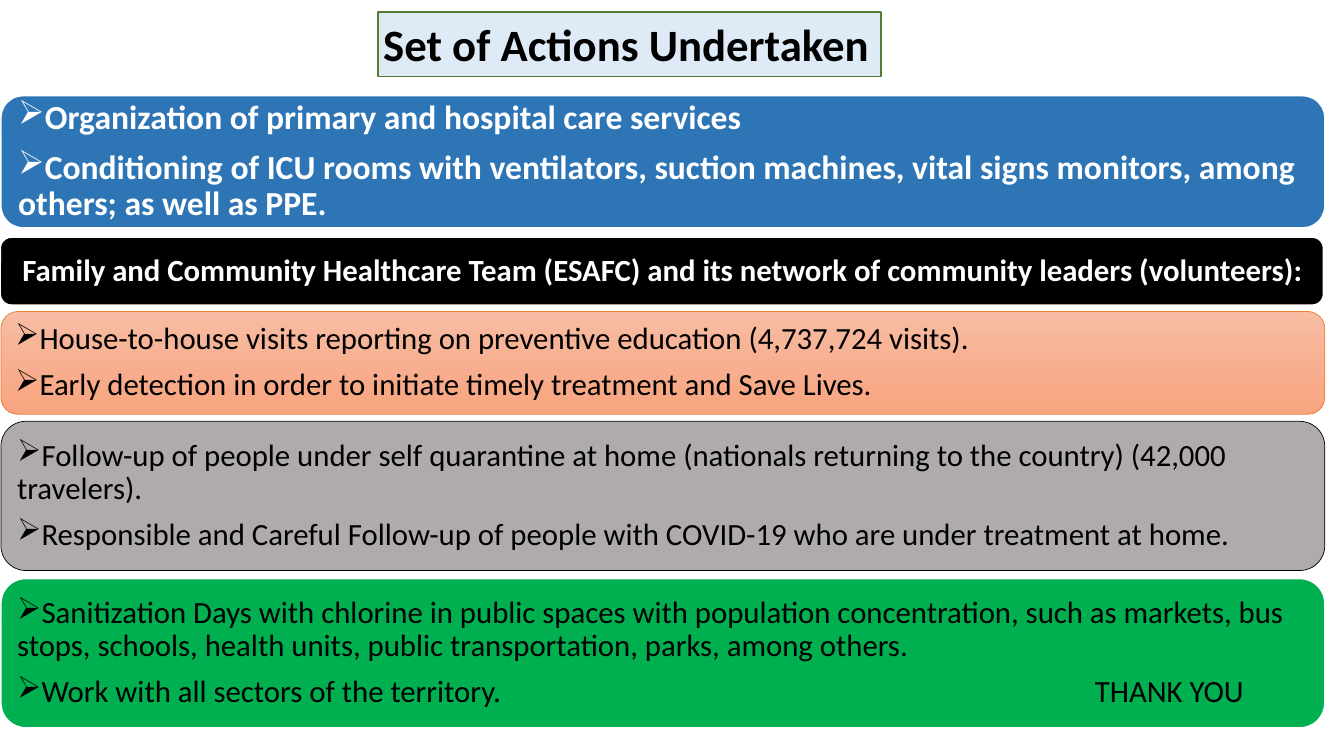
from lxml import etree
from pptx import Presentation
from pptx.dml.color import RGBColor
from pptx.enum.shapes import MSO_SHAPE
from pptx.enum.text import MSO_ANCHOR, PP_ALIGN
from pptx.oxml.ns import qn
from pptx.util import Inches, Pt

RECTANGLE = MSO_SHAPE.RECTANGLE
ROUNDED = MSO_SHAPE.ROUNDED_RECTANGLE
MIDDLE, TOP = MSO_ANCHOR.MIDDLE, MSO_ANCHOR.TOP
LEFT, CENTER, JUSTIFY = PP_ALIGN.LEFT, PP_ALIGN.CENTER, PP_ALIGN.JUSTIFY

WHITE = RGBColor(0xFF, 0xFF, 0xFF)
BLACK = RGBColor(0x00, 0x00, 0x00)
BLUE = RGBColor(0x2E, 0x75, 0xB6)
PALE_BLUE = RGBColor(0xDE, 0xEB, 0xF7)
DARK_GREEN = RGBColor(0x52, 0x7E, 0x34)
GREEN = RGBColor(0x00, 0xB0, 0x50)
GRAY = RGBColor(0xAF, 0xAB, 0xAB)
ORANGE = RGBColor(0xED, 0x7D, 0x31)
PEACH = RGBColor(0xF7, 0xBC, 0xA3)
SALMON = RGBColor(0xF8, 0xA4, 0x7F)


class ActionsSlide:
    font = "Calibri"
    inset = Inches(0.05)
    panel_width = 13.13
    closing_tab = Inches(10.69)

    def __init__(self, slide):
        self.slide = slide

    def box(self, kind, left, top, width, height, fill, line, weight):
        """Draw a filled shape; a pair of fills makes a vertical gradient."""
        shape = self.slide.shapes.add_shape(
            kind, Inches(left), Inches(top), Inches(width), Inches(height))
        shape.shadow.inherit = False
        if isinstance(fill, RGBColor):
            shape.fill.solid()
            shape.fill.fore_color.rgb = fill
        else:
            shape.fill.gradient()
            shape.fill.gradient_angle = 270
            for stop, color, position in zip(shape.fill.gradient_stops, fill, (0, 1)):
                stop.color.rgb = color
                stop.position = position
        shape.line.color.rgb = line
        shape.line.width = Pt(weight)
        return shape

    def frame(self, shape, anchor, wrap=True):
        frame = shape.text_frame
        frame.word_wrap = wrap
        frame.vertical_anchor = anchor
        frame.margin_left = frame.margin_right = self.inset
        frame.margin_top = frame.margin_bottom = self.inset
        return frame

    def add_text(self, paragraph, text, size, color, bold, align):
        paragraph.alignment = align
        run = paragraph.add_run()
        run.text = text
        run.font.name = self.font
        run.font.size = Pt(size)
        run.font.bold = bold
        run.font.color.rgb = color

    def bullet(self, paragraph, tabbed):
        properties = paragraph._p.get_or_add_pPr()
        properties.set("marL", "0")
        properties.set("indent", "0")
        etree.SubElement(properties, qn("a:buChar"), char="➢")
        if tabbed:
            stops = etree.SubElement(properties, qn("a:tabLst"))
            etree.SubElement(stops, qn("a:tab"), pos=str(self.closing_tab), algn="l")

    def title(self, text):
        banner = self.box(RECTANGLE, 3.75, 0.12, 4.99, 0.64, PALE_BLUE, DARK_GREEN, 1)
        frame = self.frame(banner, TOP, wrap=False)
        self.add_text(frame.paragraphs[0], text, 32, BLACK, True, JUSTIFY)

    def panel(self, place, fill, line, weight, text_place, lines, size=22,
              color=BLACK, bold=False, spacing=9, bulleted=True):
        left, top, height = place
        self.box(ROUNDED, left, top, self.panel_width, height, fill, line, weight)
        body = self.slide.shapes.add_textbox(*map(Inches, text_place))
        frame = self.frame(body, MIDDLE)
        for index, text in enumerate(lines):
            paragraph = frame.add_paragraph() if index else frame.paragraphs[0]
            paragraph.line_spacing = 0.9
            paragraph.space_before = Pt(spacing)
            self.add_text(paragraph, text, size, color, bold, LEFT if bulleted else CENTER)
            if bulleted:
                self.bullet(paragraph, "\t" in text)


def main():
    presentation = Presentation()
    presentation.slide_width = Inches(13.33)
    presentation.slide_height = Inches(7.5)
    actions = ActionsSlide(presentation.slides.add_slide(presentation.slide_layouts[6]))

    # Hospital care
    actions.panel(
        (0.01, 0.95, 1.31), BLUE, WHITE, 1, (0.13, 0.94, 12.91, 1.33),
        ["Organization of primary and hospital care services",
         "Conditioning of ICU rooms with ventilators, suction machines, "
         "vital signs monitors, among others; as well as PPE."],
        size=24, color=WHITE, bold=True, spacing=10)

    # Community team heading
    actions.panel(
        (0, 2.35, 0.68), BLACK, WHITE, 1.5, (0.08, 2.48, 12.98, 0.43),
        ["Family and Community Healthcare Team (ESAFC) and its network of "
         "community leaders (volunteers):"],
        color=WHITE, bold=True, bulleted=False)

    # Home visits
    actions.panel(
        (0.01, 3.09, 1.02), (PEACH, SALMON), ORANGE, 0.5, (0.1, 3.15, 12.94, 0.9),
        ["House-to-house visits reporting on preventive education (4,737,724 visits).",
         "Early detection in order to initiate timely treatment and Save Lives."])

    # Follow-up
    actions.panel(
        (0.01, 4.18, 1.48), GRAY, BLACK, 0.5, (0.12, 4.31, 12.9, 1.22),
        ["Follow-up of people under self quarantine at home (nationals returning "
         "to the country) (42,000 travelers).",
         "Responsible and Careful Follow-up of people with COVID-19 who are "
         "under treatment at home."])

    # Sanitization and closing
    actions.panel(
        (0.01, 5.74, 1.48), GREEN, WHITE, 1, (0.12, 5.87, 12.9, 1.22),
        ["Sanitization Days with chlorine in public spaces with population "
         "concentration, such as markets, bus stops, schools, health units, "
         "public transportation, parks, among others.",
         "Work with all sectors of the territory.\tTHANK YOU"])

    # Title
    actions.title("Set of Actions Undertaken")

    presentation.save("out.pptx")


if __name__ == "__main__":
    main()
